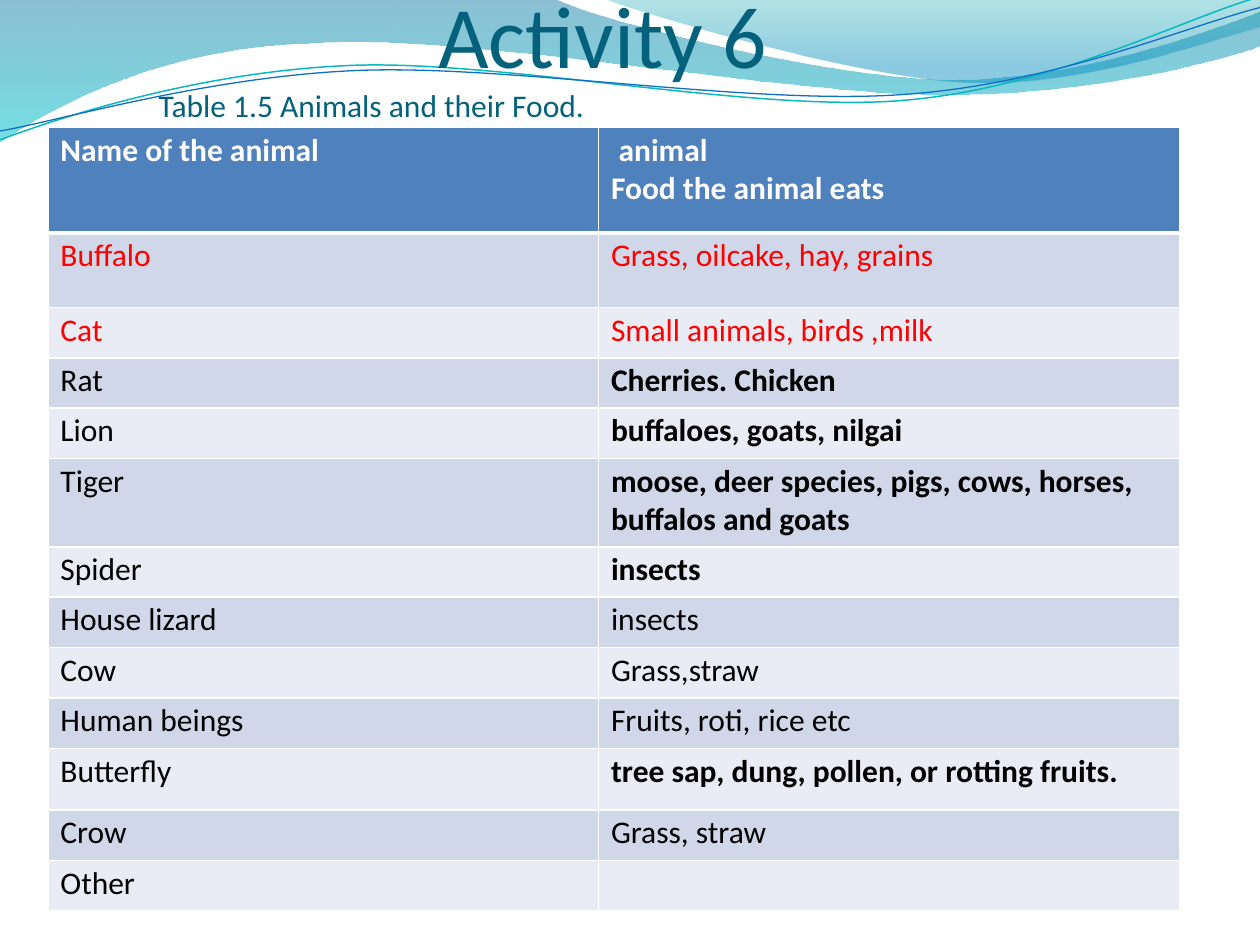
from math import cos, radians, sin

from lxml.etree import SubElement
from pptx import Presentation
from pptx.dml.color import RGBColor
from pptx.enum.text import MSO_ANCHOR
from pptx.oxml.ns import qn
from pptx.util import Inches, Pt

TITLE_LINES = [
    ("Activity 6", 2.23, {"size": Pt(50)}, {"line_spacing": Pt(47.7), "space_before": Pt(0.9)}),
    ("Table 1.5 Animals and their Food.", 0.01, {"size": Pt(18)}, {"line_spacing": Pt(21.3)}),
]
HEADER = {"bold": True, "color": "FFFFFF"}
RED = {"bold": False, "color": "FF0000"}
PLAIN = {"bold": False, "color": "000000"}
BOLD = {"bold": True, "color": "000000"}
ROWS = [
    (0.84, "Name of the animal", HEADER, "animal\nFood the animal eats", HEADER),
    (0.59, "Buffalo", RED, "Grass, oilcake, hay, grains", RED),
    (0.4, "Cat", RED, "Small animals, birds ,milk", RED),
    (0.4, "Rat", PLAIN, "Cherries. Chicken", BOLD),
    (0.4, "Lion", PLAIN, "buffaloes, goats, nilgai", BOLD),
    (0.7, "Tiger", PLAIN, "moose, deer species, pigs, cows, horses,  buffalos and goats", BOLD),
    (0.4, "Spider", PLAIN, "insects", BOLD),
    (0.4, "House lizard", PLAIN, "insects", PLAIN),
    (0.4, "Cow", PLAIN, "Grass,straw", PLAIN),
    (0.4, "Human beings", PLAIN, "Fruits, roti, rice etc", PLAIN),
    (0.49, "Butterfly", PLAIN, "tree sap, dung, pollen, or rotting fruits.", BOLD),
    (0.4, "Crow", PLAIN, "Grass, straw", PLAIN),
    (0.4, "Other", PLAIN, "", PLAIN),
]
COLUMN_WIDTHS = [4.37, 4.61]
HEADER_FILL, BAND_FILLS = "4F81BC", ["E9ECF4", "D0D7E8"]
CELL_MARGINS = {"margin_left": 0, "margin_top": Inches(0.03), "margin_right": 0, "margin_bottom": 0}
TITLE_FRAME = {"margin_left": 0, "margin_top": Inches(0.01), "margin_right": 0, "margin_bottom": 0,
               "word_wrap": True, "vertical_anchor": MSO_ANCHOR.BOTTOM}

WAVES = [
    ([(0, 0), (4.4, -0.01), (4.76, 0.17, 6.64, 0.63, 7.58, 0.63), (8.53, 0.63, 9.58, 0.26, 10, 0.09),
      (10.01, 0.36), (9.83, 0.44, 8.7, 0.76, 7.46, 0.75), (6.22, 0.75, 3.82, 0.28, 2.57, 0.34),
      (1.29, 0.36, 0.46, 0.83, -0.01, 1.13), (0, 0)],
     [(0, "0074A1", 45), (1, "00C6CF", 55)]),
    ([(4.79, -0.01), (5.09, 0.11, 6.82, 0.62, 7.69, 0.65), (8.56, 0.69, 9.61, 0.32, 10, 0.21), (10, 0),
      (4.79, -0.01)],
     [(0, "00A1A9", 30), (0.8, "008BBF", 45)]),
]
RIPPLES = [
    ([(0, 1.11), (0.48, 0.93, 1.58, 0.57, 2.77, 0.52), (3.95, 0.47, 5.93, 0.89, 7.13, 0.8),
      (8.33, 0.71, 9.38, 0.15, 9.98, -0.02)], (4.99, 0.58), "0AB8BF", 0.85),
    ([(0, 1.04), (0.47, 0.96, 1.64, 0.61, 2.83, 0.56), (4.03, 0.51, 5.97, 0.84, 7.17, 0.75),
      (8.36, 0.67, 9.41, 0.21, 10, 0.06)], (5, 0.59), "0F6FC6", 0.75),
]
RIPPLE_TILT = 2.7


def rgb(value):
    """Turn a hex string into a colour."""
    return RGBColor.from_string(value)


def apply(target, values):
    """Set each named attribute on the target."""
    for name, value in values.items():
        setattr(target, name, value)


def pairs(step):
    """Split a flat step into its points."""
    return list(zip(step[::2], step[1::2]))


def level(step, center):
    """Turn the points of a step clockwise about the center by the ripple tilt."""
    c, s = cos(radians(RIPPLE_TILT)), sin(radians(RIPPLE_TILT))
    offsets = [(x - center[0], y - center[1]) for x, y in pairs(step)]
    return [value for dx, dy in offsets
            for value in (center[0] + dx * c - dy * s, center[1] + dx * s + dy * c)]


def draw_outline(shapes, outline, closed):
    """Add a freeform with straight and curved sides."""
    start, *rest = [tuple(Inches(value) for value in step[-2:]) for step in outline]
    builder = shapes.build_freeform(*start)
    builder.add_line_segments(rest, close=closed)
    shape = builder.convert_to_shape()
    shape.shadow.inherit = False
    sides = list(shape._element.iter(qn("a:lnTo")))
    for side, step in zip(sides, outline[1:]):
        if len(step) == 2:
            continue
        curve = side.makeelement(qn("a:cubicBezTo"), {})
        for x, y in pairs(step):
            SubElement(curve, qn("a:pt"), x=str(Inches(x) - shape.left), y=str(Inches(y) - shape.top))
        side.getparent().replace(side, curve)
    return shape


def draw_waves(slide):
    """Draw the shaded waves and the thin ripples across the top."""
    for outline, stops in WAVES:
        wave = draw_outline(slide.shapes, outline, True)
        wave.line.fill.background()
        wave.fill.gradient()
        wave.fill.gradient_angle = 270
        for stop, (position, color, opacity) in zip(wave.fill.gradient_stops, stops):
            stop.position = position
            stop.color.rgb = rgb(color)
            tint = stop._gs.find(qn("a:srgbClr"))
            SubElement(tint, qn("a:alpha")).set("val", str(opacity * 1000))
    ripples = slide.shapes.add_group_shape().shapes
    for outline, center, color, width in RIPPLES:
        ripple = draw_outline(ripples, [level(step, center) for step in outline], False)
        ripple.rotation = 360 - RIPPLE_TILT
        ripple.fill.background()
        ripple.line.color.rgb = rgb(color)
        ripple.line.width = Pt(width)


def write_line(paragraph, text, indent, font, spacing, color):
    """Write one indented line of text."""
    apply(paragraph, spacing)
    paragraph._p.get_or_add_pPr().set("marL", str(Inches(indent)))
    run = paragraph.add_run()
    run.text = text
    apply(run.font, {"name": "Calibri", **font})
    run.font.color.rgb = rgb(color)


def next_paragraph(frame, index):
    """Return the first paragraph or a new one."""
    return frame.add_paragraph() if index else frame.paragraphs[0]


def draw_title(slide):
    """Write the heading and the table caption."""
    frame = slide.shapes.add_textbox(Inches(1.25), 0, Inches(5.83), Inches(0.98)).text_frame
    apply(frame, TITLE_FRAME)
    for index, (text, indent, font, spacing) in enumerate(TITLE_LINES):
        write_line(next_paragraph(frame, index), text, indent, font, spacing, "04617B")


def draw_borders(cell, widths):
    """Give the cell white borders of the given widths."""
    for side, width in widths.items():
        border = SubElement(cell._tc.get_or_add_tcPr(), qn(f"a:ln{side}"), w=str(Pt(width)))
        fill = SubElement(border, qn("a:solidFill"))
        SubElement(fill, qn("a:srgbClr"), val="FFFFFF")


def fill_cell(cell, text, style, row):
    """Format one table cell and write its lines."""
    apply(cell, CELL_MARGINS)
    draw_borders(cell, {"L": 1, "R": 1, "T": 3 if row == 1 else 1, "B": 3 if row == 0 else 1})
    cell.fill.solid()
    cell.fill.fore_color.rgb = rgb(BAND_FILLS[row % 2] if row else HEADER_FILL)
    for index, line in enumerate(text.split("\n") if text else []):
        indent = 0.16 if line == "animal" else 0.1
        font = {"size": Pt(18), "bold": style["bold"]}
        spacing = {"space_before": Pt(0 if index else 2.5)}
        write_line(next_paragraph(cell.text_frame, index), line, indent, font, spacing, style["color"])


def draw_table(slide):
    """Add the table of animals and their food."""
    height = sum(row[0] for row in ROWS)
    table = slide.shapes.add_table(len(ROWS), len(COLUMN_WIDTHS), Inches(0.38), Inches(1.01),
                                   Inches(sum(COLUMN_WIDTHS)), Inches(height)).table
    for column, width in zip(table.columns, COLUMN_WIDTHS):
        column.width = Inches(width)
    for row, (row_height, animal, animal_style, food, food_style) in enumerate(ROWS):
        table.rows[row].height = Inches(row_height)
        fill_cell(table.cell(row, 0), animal, animal_style, row)
        fill_cell(table.cell(row, 1), food, food_style, row)


def main():
    """Build and save the slide."""
    deck = Presentation()
    deck.slide_width, deck.slide_height = Inches(10), Inches(7.5)
    slide = deck.slides.add_slide(deck.slide_layouts[6])
    draw_waves(slide)
    draw_title(slide)
    draw_table(slide)
    deck.save("out.pptx")


if __name__ == "__main__":
    main()
